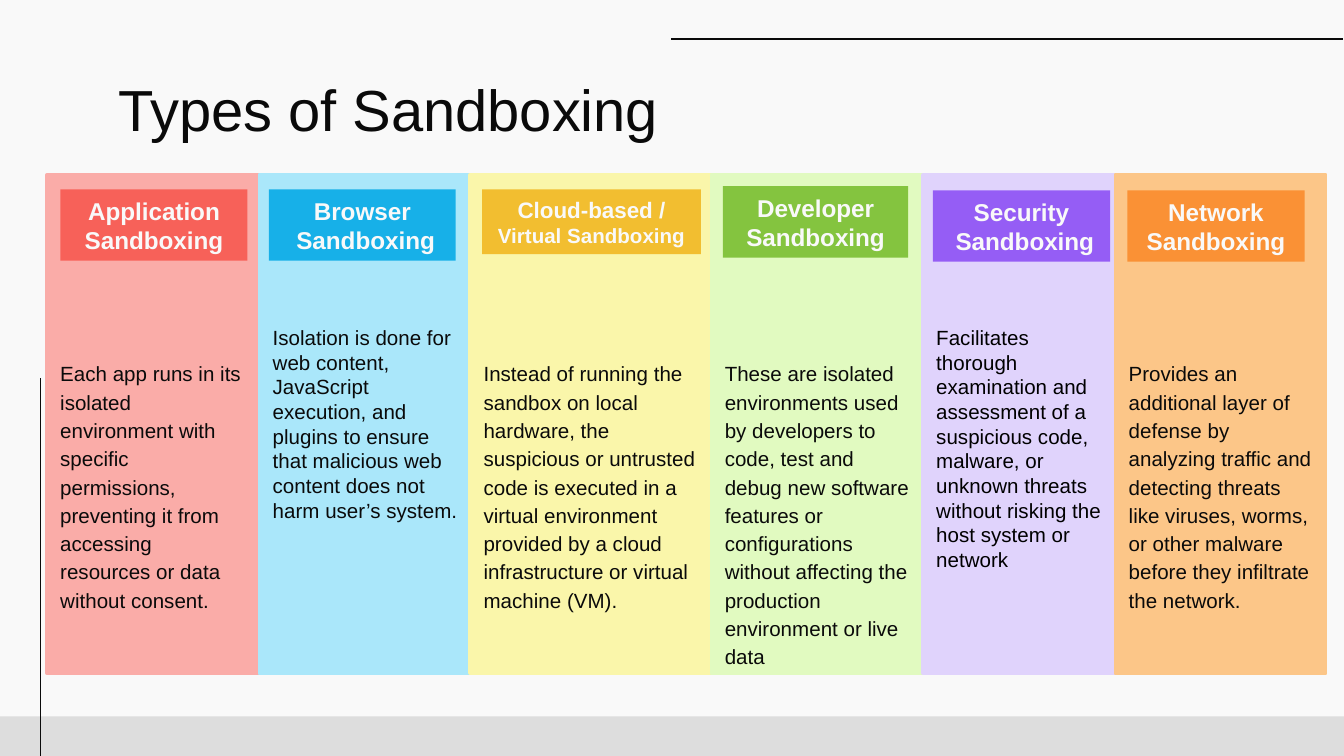
from dataclasses import dataclass
from typing import Any

from lxml import etree
from pptx import Presentation
from pptx import util as u
from pptx.dml.color import RGBColor
from pptx.enum import shapes, text
from pptx.oxml.ns import qn


@dataclass(frozen=True)
class Theme:
    font: str = "Arial"
    background: str = "F9F9F9"
    band: str = "DDDDDD"
    ink: str = "0A0A0A"
    label_ink: str = "F9F9F9"
    title_size: float = 31
    label_size: float = 13
    body_size: float = 11


@dataclass(frozen=True)
class Run:
    words: str
    size: float


@dataclass(frozen=True)
class Box:
    left: float
    top: float
    width: float
    height: float

    def lengths(self) -> list[int]:
        return [u.Pt(value) for value in (self.left, self.top, self.width, self.height)]


@dataclass(frozen=True)
class Column:
    left: float
    width: float
    panel_color: str
    label_box: Box
    label_color: str
    label: list[list[Run]]
    body: str
    tight: bool = False
    ink: str = "0A0A0A"


THEME = Theme()
SLIDE_WIDTH, SLIDE_HEIGHT = 720, 405
PANEL_TOP, PANEL_HEIGHT = 93.6, 267.1
LABEL_HEIGHT = 38.2
TIGHT_INSET, LOOSE_INSET = 80.5, 98


def label_lines(*lines: str) -> list[list[Run]]:
    return [[Run(line, THEME.label_size)] for line in lines]


COLUMNS = [
    Column(25.2, 113, "FAACA8", Box(32.4, 101.5, 100.1, LABEL_HEIGHT), "F76159",
           label_lines("Application Sandboxing"),
           "Each app runs in its isolated environment with specific permissions, "
           "preventing it from accessing resources or data without consent."),
    Column(139, 113.8, "AAE7FA", Box(144, 101.5, 100.1, LABEL_HEIGHT), "17B0E8",
           label_lines("Browser", " Sandboxing"),
           "Isolation is done for web content, JavaScript execution, and plugins to "
           "ensure that malicious web content does not harm user’s system.", tight=True),
    Column(252, 131.8, "FAF6AA", Box(258.3, 101.5, 117.2, 34.6), "F2BE30",
           [[Run("Cloud-based / ", 12), Run("Virtual Sandboxing", 11)]],
           "Instead of running the sandbox on local hardware, the suspicious or "
           "untrusted code is executed in a virtual environment provided by a cloud "
           "infrastructure or virtual machine (VM)."),
    Column(381.2, 113.6, "E1FAC0", Box(387.3, 99.8, 99.2, LABEL_HEIGHT), "84C43F",
           label_lines("Developer Sandboxing"),
           "These are isolated environments used by developers to code, test and debug "
           "new software features or configurations without affecting the production "
           "environment or live data"),
    Column(494.5, 103.7, "E0D3FC", Box(499.7, 102, 95, LABEL_HEIGHT), "955DF5",
           label_lines("Security", " Sandboxing"),
           "Facilitates thorough examination and assessment of a suspicious code, "
           "malware, or unknown threats without risking the host system or network",
           tight=True, ink="000000"),
    Column(597.6, 112.6, "FCC688", Box(603.9, 102, 95, LABEL_HEIGHT), "FA9135",
           label_lines("Network Sandboxing"),
           "Provides an additional layer of defense by analyzing traffic and detecting "
           "threats like viruses, worms, or other malware before they infiltrate the "
           "network."),
]


def apply_format(target: Any, values: dict[str, Any]) -> None:
    for name, value in values.items():
        setattr(target, name, value)


def add_run(paragraph: Any, run: Run, color: str, bold: bool = False) -> None:
    text_run = paragraph.add_run()
    text_run.text = run.words
    apply_format(text_run.font, {"name": THEME.font, "size": u.Pt(run.size), "bold": bold})
    text_run.font.color.rgb = RGBColor.from_string(color)


def add_rectangle(slide: Any, box: Box, color: str, outline: float = 0) -> Any:
    shape = slide.shapes.add_shape(shapes.MSO_SHAPE.RECTANGLE, *box.lengths())
    shape.shadow.inherit = False
    shape.fill.solid()
    shape.fill.fore_color.rgb = RGBColor.from_string(color)
    if outline:
        shape.line.color.rgb = RGBColor.from_string(color)
        shape.line.width = u.Pt(outline)
    else:
        shape.line.fill.background()
    return shape


def add_rule(slide: Any, start: tuple[float, float], end: tuple[float, float]) -> None:
    points = [u.Pt(value) for value in (*start, *end)]
    rule = slide.shapes.add_connector(shapes.MSO_CONNECTOR.STRAIGHT, *points)
    rule.line.color.rgb = RGBColor.from_string(THEME.ink)
    rule.line.width = u.Pt(0.75)
    etree.SubElement(rule._element.spPr, qn("a:effectLst"))


def add_panel(slide: Any, column: Column) -> None:
    box = Box(column.left, PANEL_TOP, column.width, PANEL_HEIGHT)
    frame = add_rectangle(slide, box, column.panel_color, outline=2).text_frame
    apply_format(frame, {
        "word_wrap": True,
        "vertical_anchor": text.MSO_ANCHOR.TOP,
        "margin_top": u.Pt(TIGHT_INSET if column.tight else LOOSE_INSET),
    })
    paragraph = frame.paragraphs[0]
    apply_format(paragraph, {
        "alignment": text.PP_ALIGN.LEFT,
        "line_spacing": 1.0 if column.tight else 1.15,
    })
    add_run(paragraph, Run(column.body, THEME.body_size), column.ink)


def add_label(slide: Any, column: Column) -> None:
    frame = add_rectangle(slide, column.label_box, column.label_color).text_frame
    apply_format(frame, {
        "word_wrap": True,
        "vertical_anchor": text.MSO_ANCHOR.TOP,
        "auto_size": text.MSO_AUTO_SIZE.SHAPE_TO_FIT_TEXT,
    })
    for index, runs in enumerate(column.label):
        paragraph = frame.add_paragraph() if index else frame.paragraphs[0]
        paragraph.alignment = text.PP_ALIGN.CENTER
        for run in runs:
            add_run(paragraph, run, THEME.label_ink, bold=True)


def set_title(slide: Any, words: str) -> None:
    title = slide.shapes.title
    places = Box(56.2, 36.7, 607.7, 43.2).lengths()
    apply_format(title, dict(zip(("left", "top", "width", "height"), places)))
    margins = ("margin_left", "margin_top", "margin_right", "margin_bottom")
    apply_format(title.text_frame, {
        "word_wrap": True,
        "auto_size": text.MSO_AUTO_SIZE.NONE,
        "vertical_anchor": text.MSO_ANCHOR.MIDDLE,
        **dict.fromkeys(margins, u.Pt(7.2)),
    })
    paragraph = title.text_frame.paragraphs[0]
    paragraph.alignment = text.PP_ALIGN.LEFT
    add_run(paragraph, Run(words, THEME.title_size), THEME.ink)


def main() -> None:
    presentation = Presentation()
    apply_format(presentation, {
        "slide_width": u.Pt(SLIDE_WIDTH), "slide_height": u.Pt(SLIDE_HEIGHT),
    })
    slide = presentation.slides.add_slide(presentation.slide_layouts.get_by_name("Title Only"))
    slide.background.fill.solid()
    slide.background.fill.fore_color.rgb = RGBColor.from_string(THEME.background)

    add_rectangle(slide, Box(0, 383.8, SLIDE_WIDTH, 21.2), THEME.band)
    add_rule(slide, (21.6, SLIDE_HEIGHT), (21.6, 202.5))
    add_rule(slide, (359.5, 21), (719.5, 21))
    set_title(slide, "Types of Sandboxing")
    for column in COLUMNS:
        add_panel(slide, column)
        add_label(slide, column)
    presentation.save("out.pptx")


if __name__ == "__main__":
    main()
